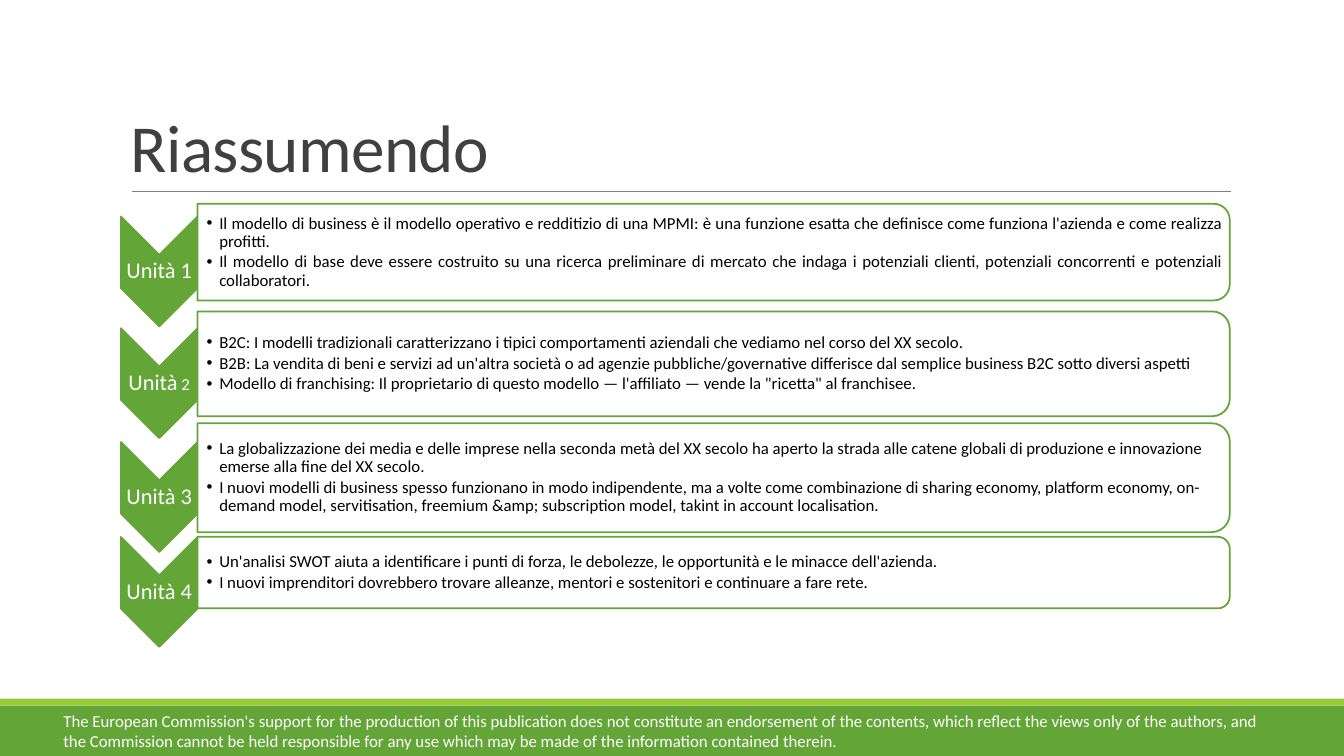
"""Build the "Riassumendo" summary slide with four unit rows."""
from dataclasses import dataclass

from lxml.etree import SubElement
from pptx import Presentation
from pptx.dml.color import RGBColor
from pptx.enum.shapes import MSO_CONNECTOR as Connector, MSO_SHAPE as Preset
from pptx.enum.text import MSO_ANCHOR as Anchor, PP_ALIGN as Align
from pptx.oxml.ns import qn
from pptx.shapes.autoshape import Shape
from pptx.slide import Slide
from pptx.util import Pt

GREEN, LIME, WHITE = "63A537", "99CB38", "FFFFFF"
FONT = "Calibri"
CHEVRON_LEFT, CHEVRON_WIDTH, CHEVRON_HEIGHT = 86.4, 54.7, 78.5
CHEVRON_DROP = 13.8
PANEL_LEFT, PANEL_WIDTH = 141.1, 737.3
BULLET_INDENT = 9


@dataclass(frozen=True)
class Box:
    left: float
    top: float
    width: float
    height: float


@dataclass(frozen=True)
class Unit:
    number: int
    middle: float
    height: float
    points: tuple[str, ...]
    align: Align = Align.LEFT
    number_size: float = 16


UNITS = (
    Unit(1, 180.1, 69.1, (
        "Il modello di business è il modello operativo e redditizio di una MPMI: è una funzione esatta che definisce come funziona l'azienda e come realizza profitti. ",
        "Il modello di base deve essere costruito su una ricerca preliminare di mercato che indaga i potenziali clienti, potenziali concorrenti e potenziali collaboratori.",
    ), align=Align.JUSTIFY),
    Unit(2, 259.9, 74.9, (
        "B2C: I modelli tradizionali caratterizzano i tipici comportamenti aziendali che vediamo nel corso del XX secolo.",
        "B2B: La vendita di beni e servizi ad un'altra società o ad agenzie pubbliche/governative differisce dal semplice business B2C sotto diversi aspetti",
        "Modello di franchising: Il proprietario di questo modello — l'affiliato — vende la \"ricetta\" al franchisee.",
    ), number_size=12),
    Unit(3, 341.2, 77.8, (
        "La globalizzazione dei media e delle imprese nella seconda metà del XX secolo ha aperto la strada alle catene globali di produzione e innovazione emerse alla fine del XX secolo.",
        "I nuovi modelli di business spesso funzionano in modo indipendente, ma a volte come combinazione di sharing economy, platform economy, on-demand model, servitisation, freemium &amp; subscription model, takint in account localisation.",
    )),
    Unit(4, 409, 51.1, (
        "Un'analisi SWOT aiuta a identificare i punti di forza, le debolezze, le opportunità e le minacce dell'azienda.",
        "I nuovi imprenditori dovrebbero trovare alleanze, mentori e sostenitori e continuare a fare rete.",
    )),
)
DISCLAIMER = (
    "The European Commission's support for the production of this publication does not constitute an endorsement of the contents, "
    "which reflect the views only of the authors, and the Commission cannot be held responsible for any use which may be made "
    "of the information contained therein."
)


def color(value: str) -> RGBColor:
    return RGBColor.from_string(value)


def add_shape(page: Slide, preset: Preset, box: Box, fill: str,
              line: str | None = None, turned: bool = False) -> Shape:
    """Fill the given visible box, turning the shape a quarter if asked."""
    width, height = (box.height, box.width) if turned else (box.width, box.height)
    left = box.left + (box.width - width) / 2
    top = box.top + (box.height - height) / 2
    shape = page.shapes.add_shape(preset, Pt(left), Pt(top), Pt(width), Pt(height))
    shape.shadow.inherit = False
    shape.rotation = 90 if turned else 0
    shape.fill.solid()
    shape.fill.fore_color.rgb = color(fill)
    if line:
        shape.line.color.rgb = color(line)
        shape.line.width = Pt(1.25)
    else:
        shape.line.fill.background()
    return shape


def add_text(page: Slide, box: Box, paragraphs: tuple[tuple[tuple[str, float], ...], ...], *,
             ink: str, align: Align = Align.LEFT, anchor: Anchor = Anchor.TOP,
             insets: tuple[float, float, float, float] = (7.2, 3.6, 7.2, 3.6),
             line_spacing: float = 1, after: float = 0,
             tracking: float = 0, bullets: bool = False) -> None:
    """Add paragraphs made of (text, size) spans in one format."""
    frame = page.shapes.add_textbox(Pt(box.left), Pt(box.top), Pt(box.width), Pt(box.height)).text_frame
    frame.word_wrap = True
    frame.vertical_anchor = anchor
    frame.margin_left, frame.margin_top, frame.margin_right, frame.margin_bottom = map(Pt, insets)
    for index, spans in enumerate(paragraphs):
        para = frame.add_paragraph() if index else frame.paragraphs[0]
        para.alignment = align
        para.line_spacing = line_spacing
        para.space_after = Pt(after)
        if bullets:
            para.level = 1
            properties = para._p.get_or_add_pPr()
            properties.set("marL", str(Pt(BULLET_INDENT)))
            properties.set("indent", str(-Pt(BULLET_INDENT)))
            SubElement(properties, qn("a:buFont"), typeface="Arial")
            SubElement(properties, qn("a:buChar"), char="•")
        for text, size in spans:
            span = para.add_run()
            span.text = text
            span.font.name = FONT
            span.font.size = Pt(size)
            span.font.color.rgb = color(ink)
            if tracking:
                span._r.get_or_add_rPr().set("spc", str(round(tracking * 100)))


def add_rule(page: Slide, left: float, right: float, top: float) -> None:
    rule = page.shapes.add_connector(Connector.STRAIGHT, Pt(left), Pt(top), Pt(right), Pt(top))
    rule.line.color.rgb = color("808080")
    rule.line.width = Pt(0.5)
    SubElement(rule._element.spPr, qn("a:effectLst"))


def add_unit(page: Slide, unit: Unit) -> None:
    """Draw a downward chevron with its label and the panel beside it."""
    middle = unit.middle + CHEVRON_DROP
    chevron = Box(CHEVRON_LEFT, middle - CHEVRON_HEIGHT / 2, CHEVRON_WIDTH, CHEVRON_HEIGHT)
    add_shape(page, Preset.CHEVRON, chevron, GREEN, GREEN, turned=True)
    add_text(page, Box(CHEVRON_LEFT, middle - 12, CHEVRON_WIDTH, 24),
             ((("Unità", 16), (f" {unit.number}", unit.number_size)),), ink=WHITE,
             align=Align.CENTER, anchor=Anchor.MIDDLE, insets=(0.8,) * 4, line_spacing=0.9)

    panel = Box(PANEL_LEFT, unit.middle - unit.height / 2, PANEL_WIDTH, unit.height)
    shape = add_shape(page, Preset.ROUND_2_SAME_RECTANGLE, panel, WHITE, GREEN, turned=True)
    fill = shape._element.spPr.find(qn("a:solidFill"))
    SubElement(fill[0], qn("a:alpha"), val="90000")
    add_text(page, Box(PANEL_LEFT, panel.top + 3, PANEL_WIDTH - 3.6, unit.height - 6),
             tuple(((point, 12),) for point in unit.points), ink="000000",
             align=unit.align, anchor=Anchor.MIDDLE, insets=(6.5, 0.8, 0.8, 0.8),
             line_spacing=0.9, after=1.8, bullets=True)


def main() -> None:
    deck = Presentation()
    deck.slide_width, deck.slide_height = Pt(960), Pt(540)
    page = deck.slides.add_slide(deck.slide_layouts[6])
    add_shape(page, Preset.RECTANGLE, Box(0, 504, 960, 36), GREEN)
    add_shape(page, Preset.RECTANGLE, Box(0, 499, 960, 5), LIME)
    add_rule(page, 94.3, 879, 136.8)
    add_text(page, Box(86.4, 22.3, 792, 114.5), ((("Riassumendo", 48),),), ink="404040",
             anchor=Anchor.BOTTOM, line_spacing=0.85, tracking=-0.5)
    for unit in UNITS:
        add_unit(page, unit)
    add_text(page, Box(38.2, 504, 885.6, 36), (((DISCLAIMER, 12),),), ink=WHITE)
    deck.save("out.pptx")


if __name__ == "__main__":
    main()
